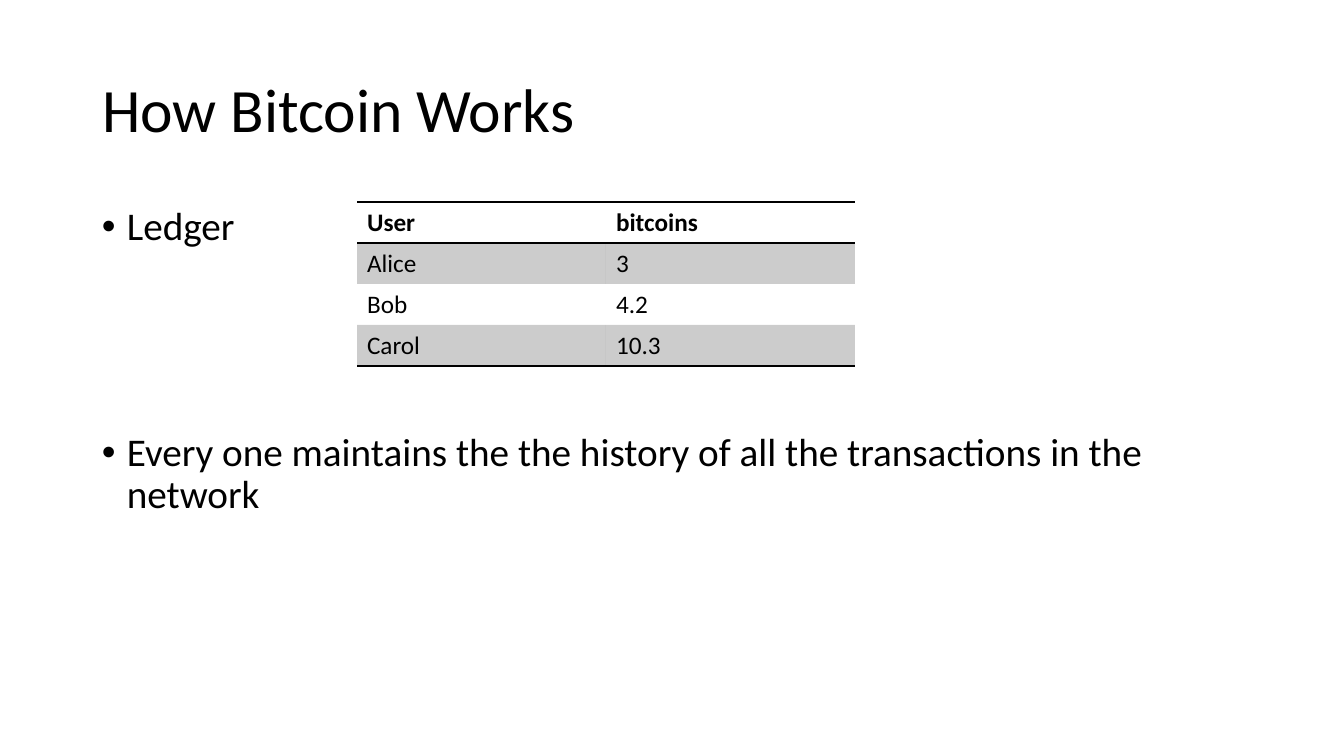
from lxml import etree
from pptx import Presentation
from pptx.dml.color import RGBColor
from pptx.enum.text import MSO_ANCHOR, PP_ALIGN
from pptx.oxml.ns import qn
from pptx.util import Pt

PX = 914400 / 100.8
BLACK = RGBColor(0x00, 0x00, 0x00)
FONT = "Calibri"
LEFT, MIDDLE = PP_ALIGN.LEFT, MSO_ANCHOR.MIDDLE
NO_STYLE = "{2D5ABB26-0587-4C30-8999-92F81FD0307C}"


def px(n):
    return round(n * PX)


def style(p, size, bold=False):
    p.alignment = LEFT
    for r in p.runs:
        r.font.name = FONT
        r.font.size = Pt(size)
        r.font.bold = bold
        r.font.color.rgb = BLACK


prs = Presentation()
prs.slide_width, prs.slide_height = px(1344), px(756)
s = prs.slides.add_slide(prs.slide_layouts[5])

# Title
title = s.shapes.title
title.left, title.top, title.width, title.height = px(92), px(40), px(1160), px(146)
tf = title.text_frame
tf.text = "How Bitcoin Works"
tf.vertical_anchor = MIDDLE
tf.paragraphs[0].line_spacing = 0.9
style(tf.paragraphs[0], 44)

# Bullets, with room for the table between them
bullets = [
    ("Ledger", 10),
    ("Every one maintains the the history of all the transactions in the network", 131),
]
body = s.shapes.add_textbox(px(92), px(202), px(1160), px(480))
tf = body.text_frame
tf.word_wrap = True
for i, (text, space) in enumerate(bullets):
    p = tf.paragraphs[0] if i == 0 else tf.add_paragraph()
    p.text = text
    p.line_spacing = 0.9
    p.space_before = Pt(space)
    style(p, 28)
    pPr = p._p.get_or_add_pPr()
    pPr.set("marL", str(px(25)))
    pPr.set("indent", str(-px(25)))
    etree.SubElement(pPr, qn("a:buFont"), typeface="Arial")
    etree.SubElement(pPr, qn("a:buChar"), char="•")

# Ledger table
ledger = [("User", "bitcoins"), ("Alice", "3"), ("Bob", "4.2"), ("Carol", "10.3")]
ROW_H, COL_W = 41, 249
frame = s.shapes.add_table(len(ledger), 2, px(357), px(202), px(2 * COL_W), px(len(ledger) * ROW_H))
table = frame.table
table._tbl.tblPr.find(qn("a:tableStyleId")).text = NO_STYLE
borders = {0: ("a:lnT", "a:lnB"), len(ledger) - 1: ("a:lnB",)}
for i, row in enumerate(ledger):
    for j, text in enumerate(row):
        cell = table.cell(i, j)
        cell.text_frame.text = text
        style(cell.text_frame.paragraphs[0], 18, bold=i == 0)
        tcPr = cell._tc.get_or_add_tcPr()
        for side in borders.get(i, ()):
            ln = etree.SubElement(tcPr, qn(side), w=str(Pt(1)))
            fill = etree.SubElement(ln, qn("a:solidFill"))
            etree.SubElement(fill, qn("a:srgbClr"), val=str(BLACK))
        # Odd rows carry a 20% black band
        if i % 2:
            cell.fill.solid()
            cell.fill.fore_color.rgb = BLACK
            color = tcPr.find(qn("a:solidFill")).find(qn("a:srgbClr"))
            etree.SubElement(color, qn("a:alpha"), val="20000")
        else:
            cell.fill.background()

prs.save("out.pptx")
